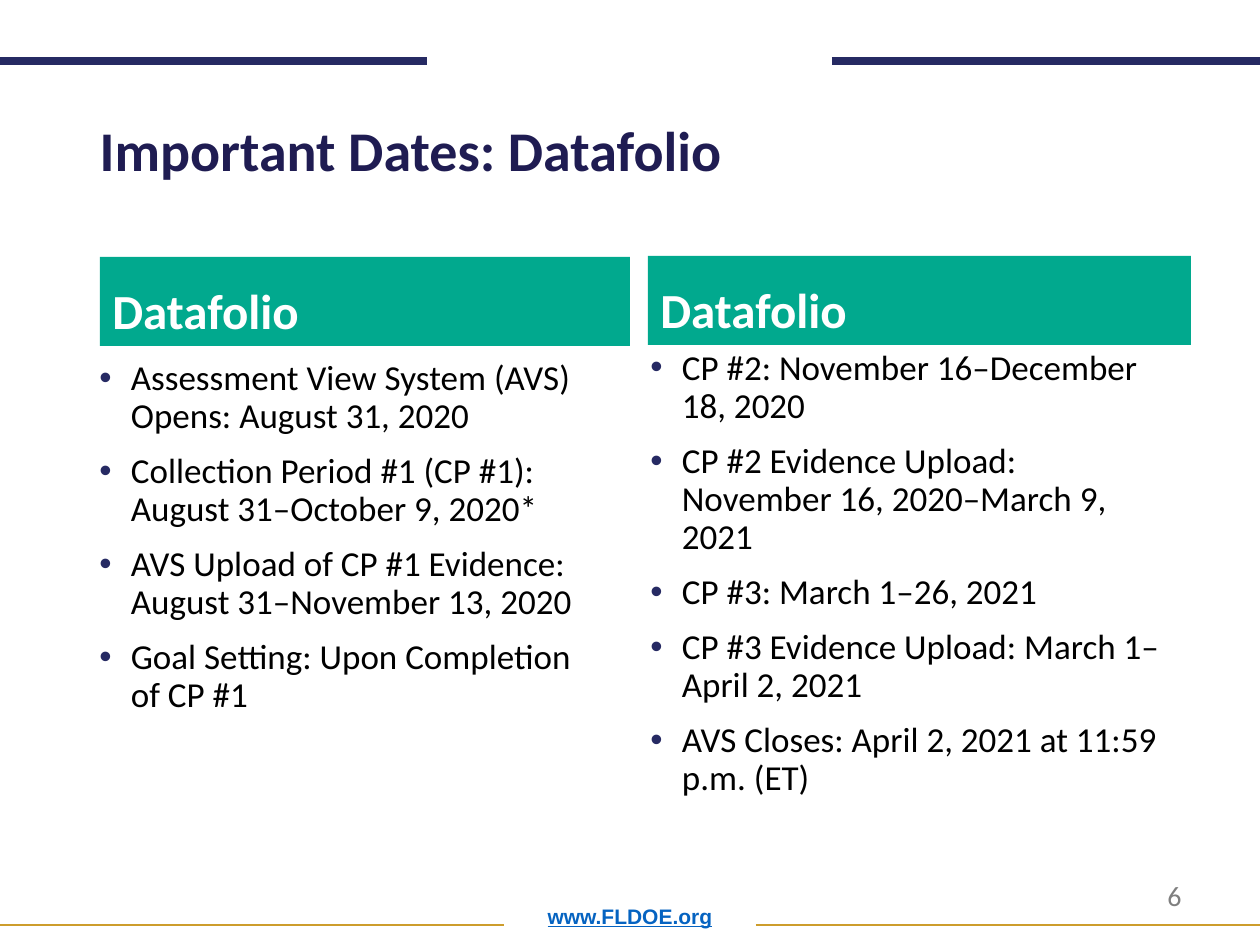
from lxml import etree
from pptx import Presentation
from pptx import util as u
from pptx.dml.color import RGBColor
from pptx.enum import shapes, text
from pptx.oxml.ns import qn

PX = u.Inches(1) // 126
NAVY = RGBColor(0x26, 0x2A, 0x63)
TITLE_NAVY = RGBColor(0x1F, 0x1C, 0x52)
GOLD = RGBColor(0xCD, 0x9D, 0x2C)
TEAL = RGBColor(0x01, 0xA9, 0x8E)
LINK_BLUE = RGBColor(0x05, 0x63, 0xC1)
GRAY = RGBColor(0x7F, 0x7F, 0x7F)
BLACK = RGBColor(0, 0, 0)
WHITE = RGBColor(255, 255, 255)

TITLE = "Important Dates: Datafolio"
# heading, heading box, body box, dates; boxes are left, top, width, height in px
COLUMNS = [
    ("Datafolio", (100, 257, 530, 89), (87, 354, 533, 602), [
        "Assessment View System (AVS) Opens: August 31, 2020",
        "Collection Period #1 (CP #1): August 31–October 9, 2020*",
        "AVS Upload of CP #1 Evidence: August 31–November 13, 2020",
        "Goal Setting: Upon Completion of CP #1",
    ]),
    ("Datafolio", (648, 256, 543, 89), (638, 344, 535, 602), [
        "CP #2: November 16–December 18, 2020",
        "CP #2 Evidence Upload: November 16, 2020–March 9, 2021",
        "CP #3: March 1–26, 2021",
        "CP #3 Evidence Upload: March 1–April 2, 2021",
        "AVS Closes: April 2, 2021 at 11:59 p.m. (ET)",
    ]),
]
# left, right, y, colour, points
RULES = [
    (0, 427, 61, NAVY, 5),
    (832, 1260, 61, NAVY, 5),
    (0, 504, 925, GOLD, 1),
    (756, 1260, 925, GOLD, 1),
]


def px(*values):
    return [u.Emu(v * PX) for v in values]


def add_bullet(p):
    p_pr = p._p.get_or_add_pPr()
    p_pr.set("marL", str(u.Inches(0.25)))
    p_pr.set("indent", str(-u.Inches(0.25)))
    colour = etree.SubElement(p_pr, qn("a:buClr"))
    etree.SubElement(colour, qn("a:srgbClr"), val=str(NAVY))
    etree.SubElement(p_pr, qn("a:buFont"), typeface="Arial")
    etree.SubElement(p_pr, qn("a:buChar"), char="•")


def write(sp, lines, size, color, bold=False, font="Calibri", spacing=0.9,
          anchor=text.MSO_ANCHOR.TOP, align=text.PP_ALIGN.LEFT, bullets=False):
    tf = sp.text_frame
    tf.word_wrap = True
    tf.auto_size = text.MSO_AUTO_SIZE.NONE
    tf.vertical_anchor = anchor
    for i, line in enumerate(lines):
        p = tf.add_paragraph() if i else tf.paragraphs[0]
        p.text = line
        if bullets:
            add_bullet(p)
        p.alignment = align
        p.line_spacing = spacing
        p.space_before = u.Pt(10 if i else 0)
        p.font.name, p.font.size, p.font.bold = font, u.Pt(size), bold
        p.font.color.rgb = color
    return tf


def add_rule(slide, left, right, y, color, width):
    line = slide.shapes.add_connector(
        shapes.MSO_CONNECTOR.STRAIGHT, *px(left, y, right, y))
    line.line.color.rgb = color
    line.line.width = u.Pt(width)
    etree.SubElement(line._element.spPr, qn("a:effectLst"))


def add_column(slide, heading, heading_box, body_box, dates):
    sp = slide.shapes.add_shape(shapes.MSO_SHAPE.RECTANGLE, *px(*heading_box))
    sp.shadow.inherit = False
    sp.fill.solid()
    sp.fill.fore_color.rgb = TEAL
    sp.line.fill.background()
    write(sp, [heading], 28, WHITE, bold=True, anchor=text.MSO_ANCHOR.BOTTOM)
    body = slide.shapes.add_textbox(*px(*body_box))
    write(body, dates, 20, BLACK, bullets=True)


def main():
    prs = Presentation()
    prs.slide_width, prs.slide_height = px(1260, 945)
    slide = prs.slides.add_slide(prs.slide_layouts[5])

    title = slide.shapes.title
    title.left, title.top, title.width, title.height = px(87, 117, 1086, 110)
    write(title, [TITLE], 32, TITLE_NAVY, bold=True)

    for rule in RULES:
        add_rule(slide, *rule)
    for column in COLUMNS:
        add_column(slide, *column)

    address = slide.shapes.add_textbox(*px(87, 882, 1086, 53))
    tf = write(address, ["www.FLDOE.org"], 12, LINK_BLUE, bold=True, font="Arial",
               anchor=text.MSO_ANCHOR.BOTTOM, align=text.PP_ALIGN.CENTER)
    tf.paragraphs[0].font.underline = True
    number = slide.shapes.add_textbox(*px(1155, 872, 92, 47))
    write(number, ["6"], 16, GRAY, spacing=1.0)

    prs.save("out.pptx")


if __name__ == "__main__":
    main()
